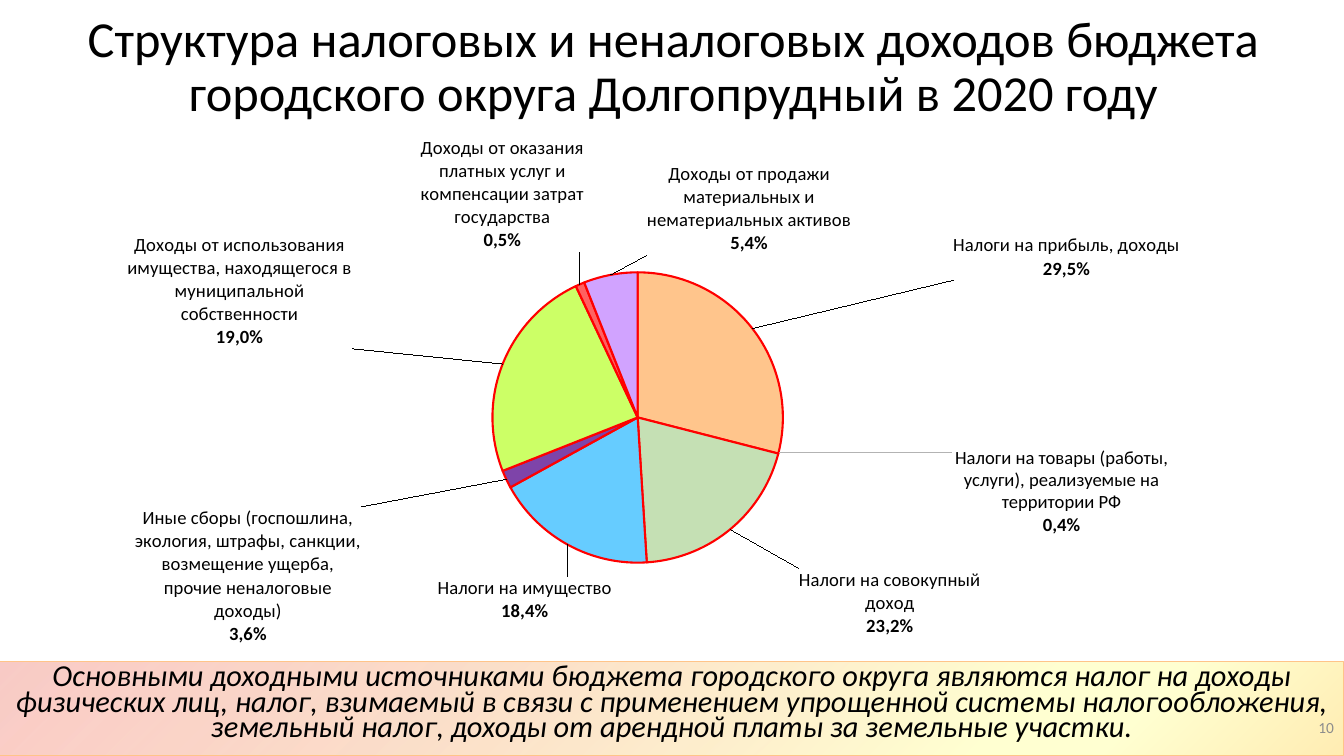
"""Build the slide on the structure of the town budget revenues."""
import dataclasses
import itertools
import math

import lxml.etree
import pptx
import pptx.chart.data
import pptx.dml.color
import pptx.enum.chart
import pptx.enum.shapes
import pptx.enum.text
import pptx.oxml
import pptx.oxml.ns
import pptx.util

Inches = pptx.util.Inches
Pt = pptx.util.Pt
qn = pptx.oxml.ns.qn
PP_ALIGN = pptx.enum.text.PP_ALIGN
ANCHOR = pptx.enum.text.MSO_ANCHOR


@dataclasses.dataclass(frozen=True)
class Theme:
    """Colours, font and type sizes of the slide."""

    font: str = "Calibri"
    text: str = "000000"
    muted: str = "8C8C8C"
    leader: str = "B3B3B3"
    outline: str = "FF0000"
    banner_line: str = "FFC489"
    banner_stops: tuple = ((0, "F8BCB7", 78), (74, "FFFFD1", 100),
                           (83, "FFFFD1", 100), (100, "FFECB2", 100))
    title_size: float = 36
    banner_size: float = 21.7
    label_size: float = 13.3
    chart_size: float = 10
    number_size: float = 11
    hairline: float = 0.75
    pie_line: float = 1.5


@dataclasses.dataclass(frozen=True)
class Slice:
    """A pie slice with the box of its label."""

    name: str
    value: int
    share: str
    color: str
    opacity: int
    center: float
    top: float
    width: float
    lines: int


THEME = Theme()
CHART_BOX = LEFT, TOP, WIDTH, HEIGHT = 0.58, 1.21, 11.49, 5.2
PLOT_TOP, PLOT_HEIGHT = 0.287, 0.554
LINE_HEIGHT, LABEL_GAP = 0.23, 0.06
LABEL_EXT = "{CE6537A1-D6FC-4f65-9D91-7224C49458BB}"
C15 = "http://schemas.microsoft.com/office/drawing/2012/chart"
TITLE = ("Структура налоговых и неналоговых доходов бюджета "
         "городского округа Долгопрудный в 2020 году")
SUMMARY = ("Основными доходными источниками бюджета городского округа являются "
           "налог на доходы физических лиц, налог, взимаемый в связи с применением "
           "упрощенной системы налогообложения, земельный налог, доходы от арендной "
           "платы за земельные участки.")
SLICES = [
    Slice("Налоги на прибыль, доходы", 29, "29,5%", "FFC489", 97, 10.59, 2.32, 2.27, 2),
    Slice("Налоги на товары (работы, услуги), реализуемые на территории РФ",
          0, "0,4%", "C55A11", 90, 10.53, 4.42, 2.17, 4),
    Slice("Налоги на совокупный доход", 20, "23,2%", "C5E0B4", 100, 8.84, 5.64, 1.83, 3),
    Slice("Налоги на имущество", 18, "18,4%", "66CCFF", 100, 5.19, 5.72, 1.76, 2),
    Slice("Иные сборы (госпошлина, экология, штрафы, санкции, возмещение ущерба, "
          "прочие неналоговые доходы)", 2, "3,6%", "7030A0", 90, 2.45, 5.03, 2.26, 6),
    Slice("Доходы от использования имущества, находящегося в муниципальной "
          "собственности", 24, "19,0%", "CCFF66", 100, 2.36, 2.31, 2.26, 5),
    Slice("Доходы от оказания платных услуг и компенсации затрат государства",
          1, "0,5%", "FF5050", 90, 4.97, 1.35, 1.65, 5),
    Slice("Доходы от продажи материальных и нематериальных активов",
          6, "5,4%", "CC99FF", 90, 7.42, 1.61, 2.05, 4),
]


def rgb(color: str) -> pptx.dml.color.RGBColor:
    """Turn a hex string into a colour."""
    return pptx.dml.color.RGBColor.from_string(color)


def style(p, size: float, color: str = THEME.text, align=PP_ALIGN.CENTER,
          bold: bool = False, italic: bool = False) -> None:
    """Format a paragraph and all its runs."""
    p.alignment = align
    for r in p.runs:
        r.font.name, r.font.size = THEME.font, Pt(size)
        r.font.bold, r.font.italic = bold, italic
        r.font.color.rgb = rgb(color)


def add_title(s) -> None:
    """Fill and format the title placeholder."""
    sp = s.shapes.title
    sp.left, sp.top, sp.width, sp.height = map(Inches, (0.58, 0.28, 12.2, 0.79))
    tf = sp.text_frame
    tf.text = TITLE
    tf.word_wrap = True
    tf.auto_size = pptx.enum.text.MSO_AUTO_SIZE.NONE
    tf.vertical_anchor = ANCHOR.MIDDLE
    tf.paragraphs[0].line_spacing = 0.9
    style(tf.paragraphs[0], THEME.title_size)


def add_banner(s) -> None:
    """Draw the gradient strip with the summary."""
    sp = s.shapes.add_shape(pptx.enum.shapes.MSO_SHAPE.RECTANGLE,
                            *map(Inches, (0, 6.56, 13.33, 0.94)))
    sp.shadow.inherit = False
    sp.fill.gradient()
    sp.fill.gradient_angle = 315
    stops = sp.element.spPr.find(".//" + qn("a:gsLst"))
    for old in list(stops):
        stops.remove(old)
    for pos, color, opacity in THEME.banner_stops:
        gs = lxml.etree.SubElement(stops, qn("a:gs"), pos=str(pos * 1000))
        clr = lxml.etree.SubElement(gs, qn("a:srgbClr"), val=color)
        lxml.etree.SubElement(clr, qn("a:alpha"), val=str(opacity * 1000))
    sp.line.color.rgb = rgb(THEME.banner_line)
    sp.line.width = Pt(THEME.hairline)
    tf = sp.text_frame
    tf.text = SUMMARY
    tf.word_wrap = True
    tf.vertical_anchor = ANCHOR.TOP
    tf.paragraphs[0].line_spacing = 0.7
    style(tf.paragraphs[0], THEME.banner_size, italic=True)


def manual_layout(parent, **values) -> None:
    """Add a manual chart layout to an element."""
    manual = lxml.etree.SubElement(parent, qn("c:manualLayout"))
    for tag, val in values.items():
        lxml.etree.SubElement(manual, qn(f"c:{tag}"), val=str(val))


def new_layout():
    """Create an empty chart layout element."""
    return pptx.oxml.parse_xml(f'<c:layout {pptx.oxml.ns.nsdecls("c")}/>')


def write_label(tf, item: Slice) -> None:
    """Write the name and, below it, the bold share."""
    tf.text = f"{item.name}\n{item.share}"
    for p, bold in zip(tf.paragraphs, (False, True)):
        style(p, THEME.label_size, bold=bold)


def place_label(d_lbl, item: Slice, angle: float) -> None:
    """Shift a data label from its default place outside the arc to its box."""
    reach = HEIGHT * PLOT_HEIGHT / 2 + LABEL_GAP
    height = item.lines * LINE_HEIGHT
    x = LEFT + WIDTH / 2 + reach * math.sin(angle)
    y = TOP + HEIGHT * (PLOT_TOP + PLOT_HEIGHT / 2) - reach * math.cos(angle)
    x -= item.width if math.sin(angle) < 0 else 0
    y -= height if math.cos(angle) > 0 else 0
    layout = new_layout()
    manual_layout(layout, x=round((item.center - item.width / 2 - x) / WIDTH, 4),
                  y=round((item.top - y) / HEIGHT, 4))
    d_lbl.insert(1, layout)
    ext_list = lxml.etree.SubElement(d_lbl, qn("c:extLst"))
    ext = lxml.etree.SubElement(ext_list, qn("c:ext"), uri=LABEL_EXT)
    size = lxml.etree.SubElement(ext, f"{{{C15}}}layout", nsmap={"c15": C15})
    manual_layout(size, w=round(item.width / WIDTH, 4), h=round(height / HEIGHT, 4))


def add_pie(s) -> None:
    """Draw the pie chart with its labels."""
    data = pptx.chart.data.CategoryChartData()
    data.categories = [item.name for item in SLICES]
    data.add_series("Series 1", [item.value for item in SLICES])
    chart = s.shapes.add_chart(pptx.enum.chart.XL_CHART_TYPE.PIE,
                               *map(Inches, CHART_BOX), data).chart
    chart.has_title = chart.has_legend = False
    chart.font.name, chart.font.size = THEME.font, Pt(THEME.chart_size)
    chart.font.color.rgb = rgb(THEME.text)
    chart.plots[0].vary_by_categories = True
    series = chart.plots[0].series[0]
    series.data_labels.show_value = False
    total = sum(item.value for item in SLICES)
    ends = itertools.accumulate(item.value for item in SLICES)
    for i, (item, end) in enumerate(zip(SLICES, ends)):
        point = series.points[i]
        point.format.fill.solid()
        point.format.fill.fore_color.rgb = rgb(item.color)
        point.format.line.color.rgb = rgb(THEME.outline)
        point.format.line.width = Pt(THEME.pie_line)
        d_pt = list(chart.element.iter(qn("c:dPt")))[-1]
        lxml.etree.SubElement(d_pt.find(".//" + qn("a:srgbClr")), qn("a:alpha"),
                              val=str(item.opacity * 1000))
        if item.value:
            write_label(point.data_label.text_frame, item)
            d_lbl = list(chart.element.iter(qn("c:dLbl")))[-1]
            place_label(d_lbl, item, 2 * math.pi * (end - item.value / 2) / total)
        else:
            add_empty_slice_label(s, item)
    area = chart.element.find(".//" + qn("c:plotArea"))
    for old in area.findall(qn("c:layout")):
        area.remove(old)
    layout = new_layout()
    manual_layout(layout, layoutTarget="inner", xMode="edge", yMode="edge",
                  x=0, y=PLOT_TOP, w=1, h=PLOT_HEIGHT)
    area.insert(0, layout)


def add_empty_slice_label(s, item: Slice) -> None:
    """Label a slice too thin to carry a data label."""
    left = item.center - item.width / 2
    tf = s.shapes.add_textbox(*map(Inches, (left, item.top, item.width,
                                            item.lines * LINE_HEIGHT))).text_frame
    tf.word_wrap = True
    tf.margin_left = tf.margin_right = tf.margin_top = tf.margin_bottom = 0
    write_label(tf, item)
    line = s.shapes.add_connector(pptx.enum.shapes.MSO_CONNECTOR.STRAIGHT,
                                  *map(Inches, (7.73, 4.49, left, 4.49)))
    line.line.color.rgb = rgb(THEME.leader)
    line.line.width = Pt(THEME.hairline)
    lxml.etree.SubElement(line.element.spPr, qn("a:effectLst"))


def add_number(s) -> None:
    """Write the slide number."""
    tf = s.shapes.add_textbox(*map(Inches, (10.33, 7.02, 3, 0.4))).text_frame
    tf.word_wrap = True
    tf.vertical_anchor = ANCHOR.MIDDLE
    tf.text = "10"
    style(tf.paragraphs[0], THEME.number_size, THEME.muted, PP_ALIGN.RIGHT)


def main() -> None:
    """Build and save the presentation."""
    prs = pptx.Presentation()
    prs.slide_width, prs.slide_height = Inches(13.33), Inches(7.5)
    s = prs.slides.add_slide(prs.slide_layouts[5])
    for draw in (add_title, add_banner, add_number, add_pie):
        draw(s)
    prs.save("out.pptx")


if __name__ == "__main__":
    main()
